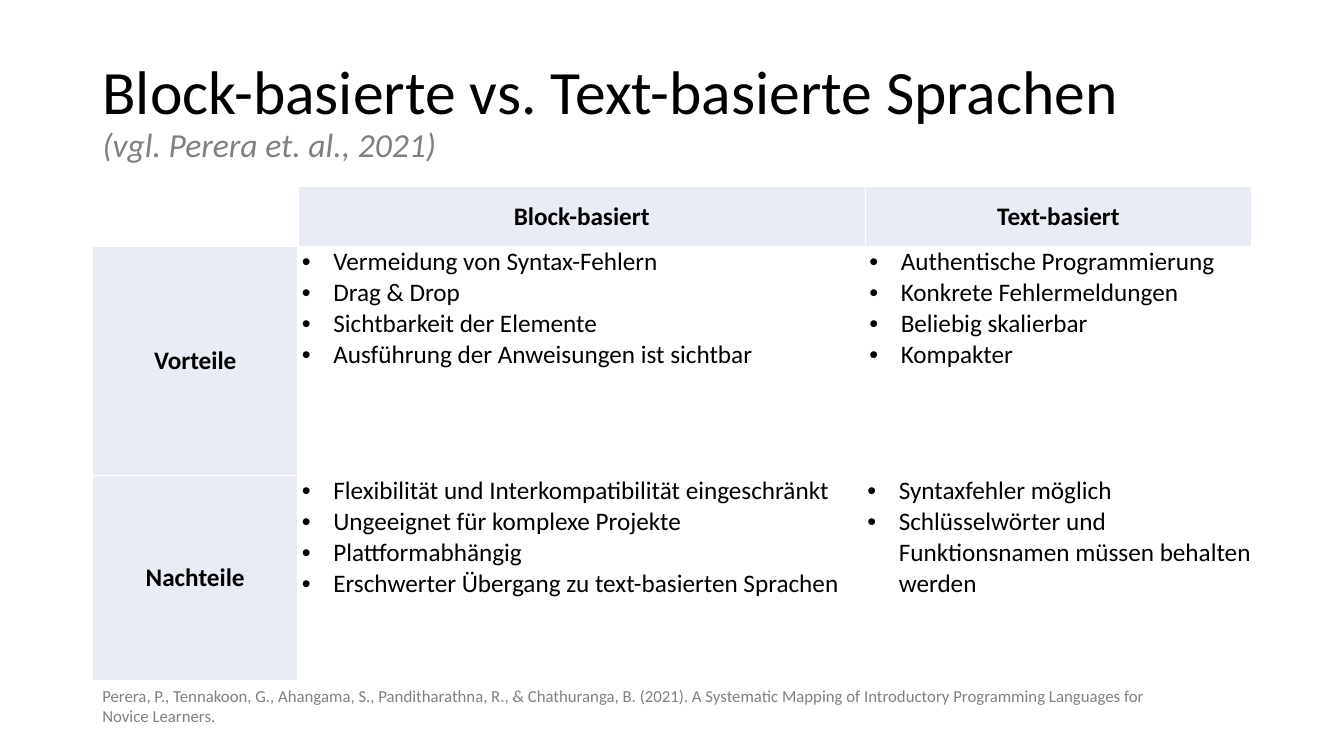
from lxml.etree import SubElement
from pptx import Presentation
from pptx.dml.color import RGBColor
from pptx.enum.text import MSO_ANCHOR as Anchor, PP_ALIGN as Align
from pptx.oxml import parse_xml
from pptx.oxml.ns import nsdecls, qn
from pptx.util import Cm, Pt

COLORS = {"text": "000000", "muted": "808080", "header": "E9EBF5", "border": "FFFFFF"}
FONT = "Calibri"
LEFT, WIDTH = Cm(2.33), Cm(29.21)
COLUMN_WIDTHS = [5.18, 14.3, 9.73]
ROW_HEIGHTS = [1.52, 5.77, 5.16]

HEADINGS = ["Block-basiert", "Text-basiert"]
COMPARISON = {
    "Vorteile": [
        ["Vermeidung von Syntax-Fehlern", "Drag & Drop", "Sichtbarkeit der Elemente",
         "Ausführung der Anweisungen ist sichtbar"],
        ["Authentische Programmierung", "Konkrete Fehlermeldungen", "Beliebig skalierbar",
         "Kompakter"],
    ],
    "Nachteile": [
        ["Flexibilität und Interkompatibilität eingeschränkt", "Ungeeignet für komplexe Projekte",
         "Plattformabhängig", "Erschwerter Übergang zu text-basierten Sprachen"],
        ["Syntaxfehler möglich", "Schlüsselwörter und Funktionsnamen müssen behalten werden"],
    ],
}
SOURCE = [
    "Perera, P., Tennakoon, G., Ahangama, S., Panditharathna, R., & Chathuranga, B. (2021). "
    "A Systematic Mapping of Introductory Programming Languages for",
    "Novice Learners.",
]


def add_run(paragraph, text, size, color="text", bold=False, italic=False):
    run = paragraph.add_run()
    run.text = text
    font = run.font
    font.name, font.size, font.bold, font.italic = FONT, Pt(size), bold, italic
    font.color.rgb = RGBColor.from_string(COLORS[color])


def add_bullet(paragraph):
    props = paragraph._p.get_or_add_pPr()
    props.set("marL", str(Cm(0.79)))
    props.set("indent", str(-Cm(0.79)))
    SubElement(props, qn("a:buFont"), typeface="Arial")
    SubElement(props, qn("a:buChar"), char="•")


def style_cell(cell, inset=0.0):
    cell.margin_left = Cm(inset)
    cell.margin_right = cell.margin_top = cell.margin_bottom = Cm(0)
    cell.fill.background()
    props = cell._tc.get_or_add_tcPr()
    for position, side in enumerate(("lnL", "lnR", "lnT", "lnB")):
        props.insert(position, parse_xml(
            f'<a:{side} {nsdecls("a")} w="{Pt(1)}"><a:solidFill>'
            f'<a:srgbClr val="{COLORS["border"]}"/></a:solidFill></a:{side}>'))


def fill_heading(cell, text):
    style_cell(cell)
    cell.fill.solid()
    cell.fill.fore_color.rgb = RGBColor.from_string(COLORS["header"])
    cell.vertical_anchor = Anchor.MIDDLE
    paragraph = cell.text_frame.paragraphs[0]
    paragraph.alignment = Align.CENTER
    add_run(paragraph, text, 18, bold=True)


def fill_list(cell, points, inset):
    style_cell(cell, inset)
    frame = cell.text_frame
    for index, point in enumerate(points):
        paragraph = frame.add_paragraph() if index else frame.paragraphs[0]
        add_bullet(paragraph)
        add_run(paragraph, point, 18)


def add_title(slide):
    title = slide.shapes.title
    title.left, title.top, title.width, title.height = LEFT, Cm(1.01), WIDTH, Cm(3.68)
    title.text_frame.word_wrap = True
    title.text_frame.vertical_anchor = Anchor.MIDDLE
    paragraph = title.text_frame.paragraphs[0]
    paragraph.alignment = Align.LEFT
    paragraph.line_spacing = 0.9
    add_run(paragraph, "Block-basierte vs. Text-basierte Sprachen", 44)
    paragraph.add_line_break()
    add_run(paragraph, "(vgl. Perera et. al., 2021)", 24, "muted", italic=True)


def add_comparison(slide):
    table = slide.shapes.add_table(3, 3, LEFT, Cm(4.7), WIDTH, Cm(sum(ROW_HEIGHTS))).table
    table.first_row = table.horz_banding = False
    for column, width in zip(table.columns, COLUMN_WIDTHS):
        column.width = Cm(width)
    for row, height in zip(table.rows, ROW_HEIGHTS):
        row.height = Cm(height)

    # Heading row with an empty corner
    style_cell(table.cell(0, 0))
    for col, heading in enumerate(HEADINGS, 1):
        fill_heading(table.cell(0, col), heading)

    # Advantages and disadvantages
    for row, (label, lists) in enumerate(COMPARISON.items(), 1):
        fill_heading(table.cell(row, 0), label)
        for col, points in enumerate(lists, 1):
            fill_list(table.cell(row, col), points, 0.05 if (row, col) == (2, 2) else 0.1)


def add_source(slide):
    frame = slide.shapes.add_textbox(LEFT, Cm(17.15), WIDTH, Cm(1.28)).text_frame
    frame.word_wrap = True
    paragraph = frame.paragraphs[0]
    for index, line in enumerate(SOURCE):
        if index:
            paragraph.add_line_break()
        add_run(paragraph, line, 12, "muted")


def main():
    prs = Presentation()
    prs.slide_width, prs.slide_height = Cm(33.87), Cm(19.05)
    slide = prs.slides.add_slide(prs.slide_layouts[5])
    add_title(slide)
    add_comparison(slide)
    add_source(slide)
    prs.save("out.pptx")


if __name__ == "__main__":
    main()
